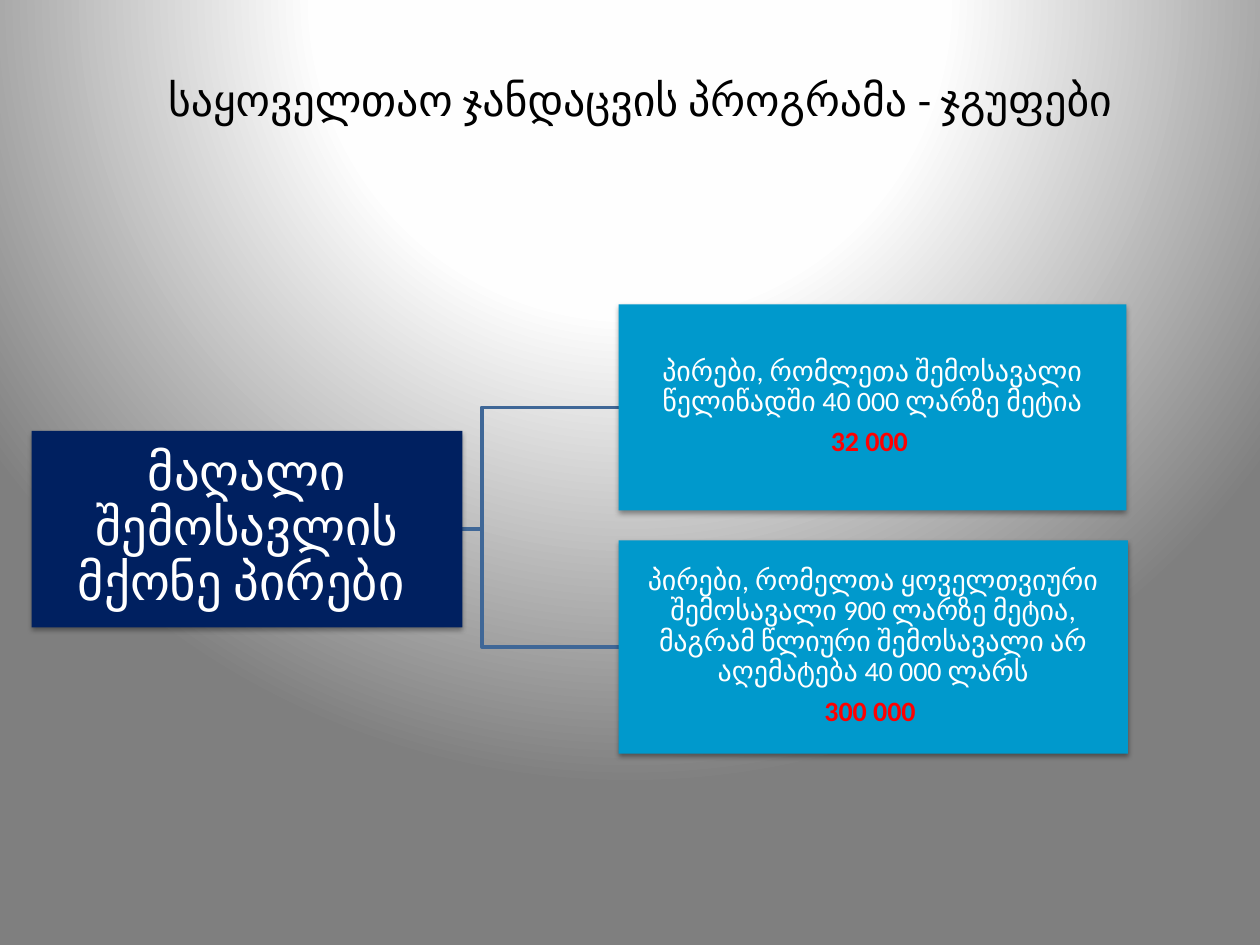
from lxml.etree import SubElement as Sub
from pptx import Presentation
from pptx.dml.color import RGBColor as Rgb
from pptx.enum.shapes import MSO_SHAPE as Shape
from pptx.enum.text import MSO_ANCHOR as Anchor, PP_ALIGN as Align
from pptx.oxml.ns import qn
from pptx.util import Pt

COLORS = {
    "text": "000000", "light": "FFFFFF", "count": "FF0000",
    "root": "002060", "group": "0099CC", "line": "3F6797",
}
GLOW = [(0, "FFFFFF"), (40, "FEFEFE"), (100, "7F7F7F")]


def tint(name):
    return Rgb.from_string(COLORS[name])


class Deck:
    font = "Calibri"

    def __init__(self, wide, high):
        self.prs = Presentation()
        self.prs.slide_width, self.prs.slide_height = Pt(wide), Pt(high)
        self.slide = self.prs.slides.add_slide(self.prs.slide_layouts[5])
        self.shapes = self.slide.shapes

    def backdrop(self, stops):
        """Fill the slide with a circular gradient centred above its top edge."""
        fill = self.slide.background.fill
        fill.gradient()
        grad = self.slide.element.find(".//" + qn("a:gradFill"))
        for child in list(grad):
            grad.remove(child)
        row = Sub(grad, qn("a:gsLst"))
        for pos, color in stops:
            stop = Sub(row, qn("a:gs"), pos=str(pos * 1000))
            Sub(stop, qn("a:srgbClr"), val=color)
        path = Sub(grad, qn("a:path"), path="circle")
        Sub(path, qn("a:fillToRect"), l="50000", t="-80000", r="50000", b="180000")

    def style(self, para, size, color, bold=False):
        para.alignment = Align.CENTER
        for run in para.runs:
            font = run.font
            font.name, font.size, font.bold = self.font, Pt(size), bold
            font.color.rgb = tint(color)

    def title(self, text, left, top, wide, high, size):
        box = self.shapes.title
        box.left, box.top, box.width, box.height = map(Pt, (left, top, wide, high))
        frame = box.text_frame
        frame.text = text
        frame.vertical_anchor = Anchor.MIDDLE
        self.style(frame.paragraphs[0], size, "text")

    def branch(self, start, end):
        """Draw an elbow line that turns halfway between two points."""
        (x1, y1), (x2, y2) = start, end
        mid = (x1 + x2) / 2
        pen = self.shapes.build_freeform(Pt(x1), Pt(y1))
        turns = [(mid, y1), (mid, y2), (x2, y2)]
        pen.add_line_segments([(Pt(x), Pt(y)) for x, y in turns], close=False)
        line = pen.convert_to_shape()
        line.fill.background()
        line.line.color.rgb = tint("line")
        line.line.width = Pt(2)
        line.shadow.inherit = False

    def shade(self, box, dist, alpha):
        box.shadow.inherit = False
        effects = box.element.spPr.find(qn("a:effectLst"))
        drop = Sub(effects, qn("a:outerShdw"), blurRad=str(Pt(3.1)),
                   dist=str(Pt(dist)), dir="5400000", rotWithShape="0")
        color = Sub(drop, qn("a:srgbClr"), val="000000")
        Sub(color, qn("a:alpha"), val=str(alpha * 1000))

    def box(self, area, fill, lines, size, inset, dist, alpha):
        """Add a filled box; lines holds (text, color, bold) per paragraph."""
        box = self.shapes.add_shape(Shape.RECTANGLE, *map(Pt, area))
        box.fill.solid()
        box.fill.fore_color.rgb = tint(fill)
        box.line.fill.background()
        self.shade(box, dist, alpha)
        frame = box.text_frame
        frame.word_wrap = True
        frame.vertical_anchor = Anchor.MIDDLE
        frame.margin_left = frame.margin_right = Pt(inset)
        frame.margin_top = frame.margin_bottom = Pt(inset)
        frame.text = "\n".join(text for text, _, _ in lines)
        for para, (_, color, bold) in zip(frame.paragraphs, lines):
            para.line_spacing = 0.9
            para.space_after = Pt(size * 0.35)
            self.style(para, size, color, bold)


def main():
    deck = Deck(720, 540)
    deck.backdrop(GLOW)
    deck.title("საყოველთაო ჯანდაცვის პროგრამა - ჯგუფები", 42, 25, 648, 63, 25)

    root = (18, 246.2, 246.2, 112.3)
    groups = [
        ((353.5, 174, 290.2, 117.6),
         "პირები, რომლეთა შემოსავალი წელიწადში 40 000 ლარზე მეტია",
         "32 000 "),
        ((353.5, 308.8, 291, 121.8),
         "პირები, რომელთა ყოველთვიური შემოსავალი 900 ლარზე მეტია, "
         "მაგრამ წლიური შემოსავალი არ აღემატება 40 000 ლარს",
         "300 000 "),
    ]
    fork = (197.3, root[1] + root[3] / 2)
    for (left, top, _, high), _, _ in groups:
        deck.branch(fork, (left, top + high / 2))

    deck.box(root, "root", [("მაღალი შემოსავლის მქონე პირები ", "light", False)],
             29, 1.4, 1.8, 35)
    for area, text, count in groups:
        lines = [(text, "light", False), (count, "count", True)]
        deck.box(area, "group", lines, 16, 0.8, 1.6, 38)

    deck.prs.save("out.pptx")


if __name__ == "__main__":
    main()
